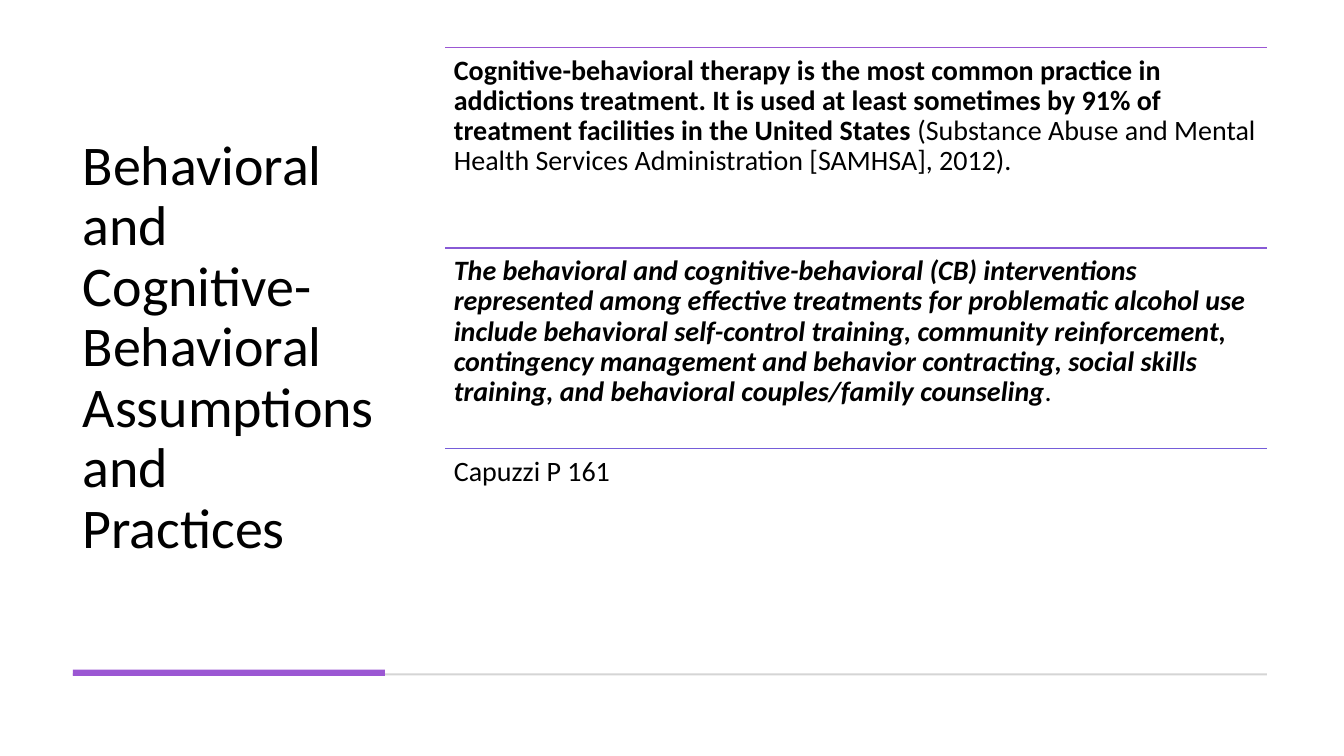
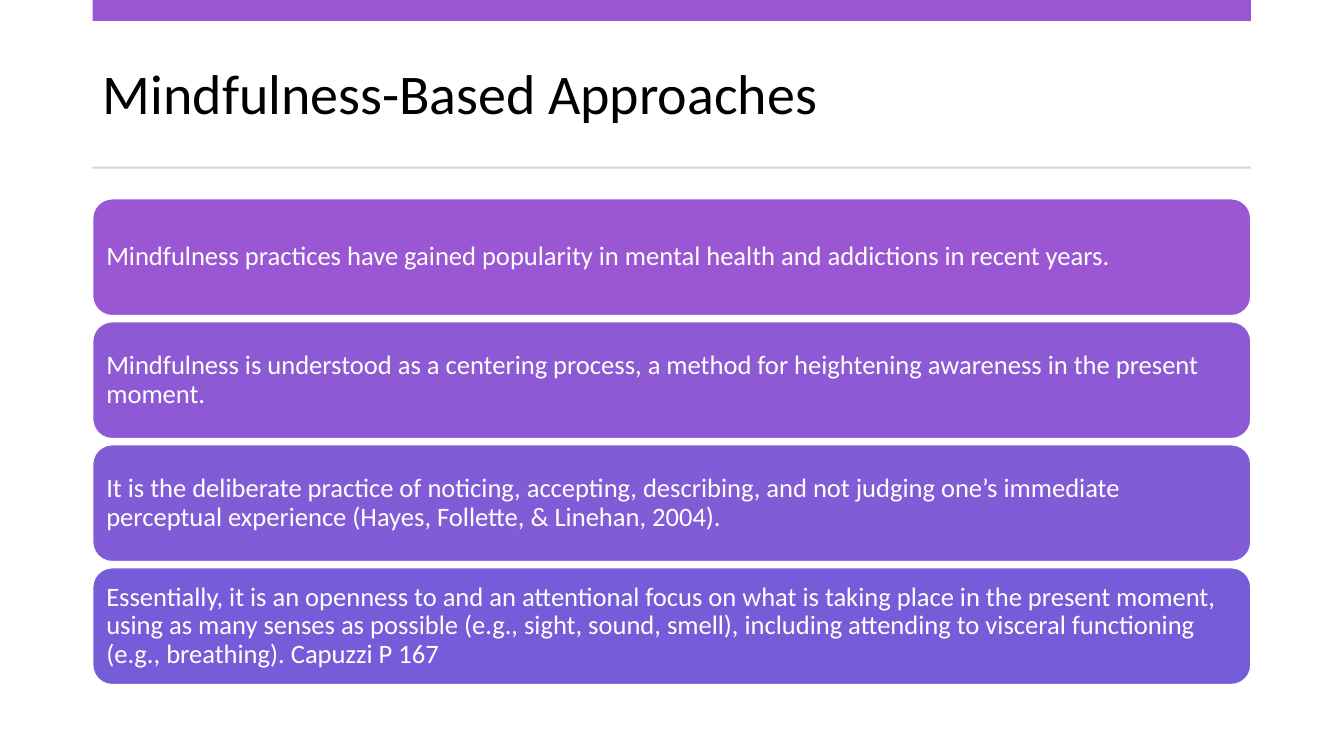
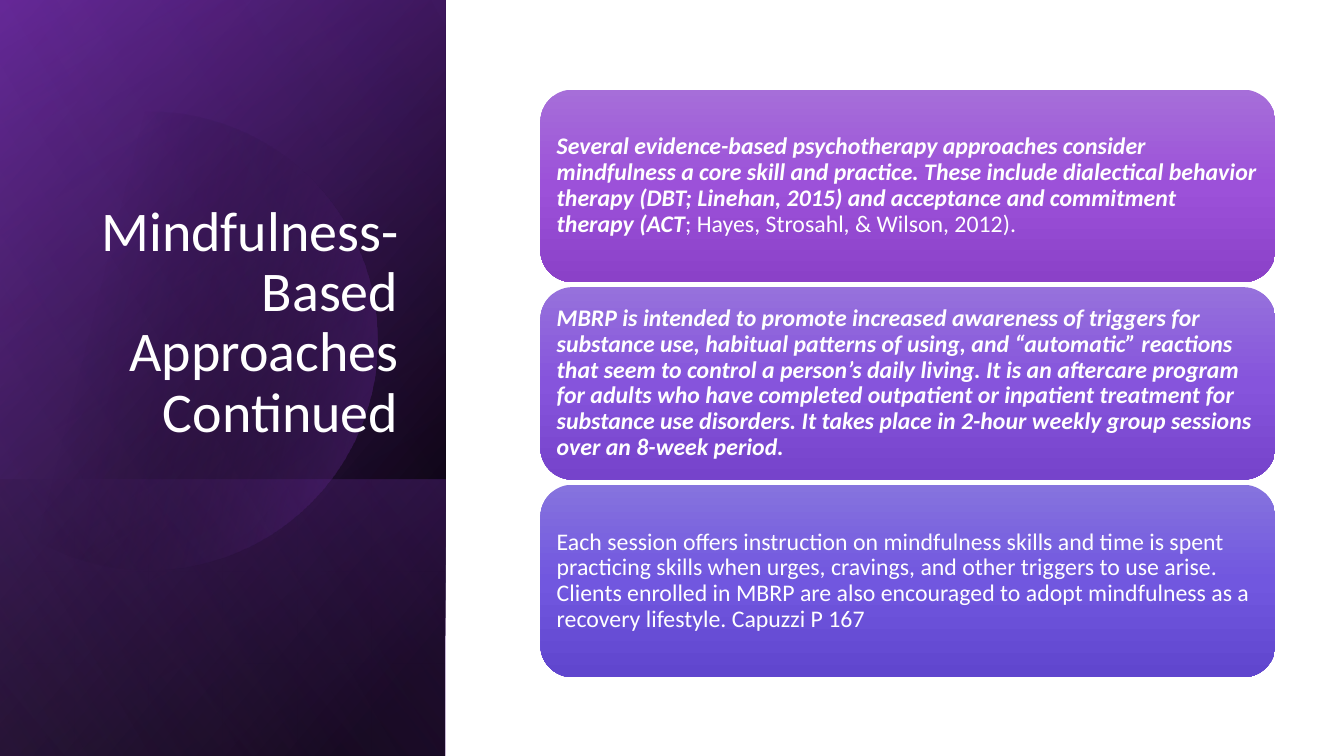
from math import acos, cos, sin
from lxml.etree import SubElement
from pptx import Presentation
from pptx.dml.color import RGBColor
from pptx.enum.shapes import MSO_CONNECTOR, MSO_SHAPE
from pptx.enum.text import MSO_ANCHOR, PP_ALIGN
from pptx.oxml.ns import qn
from pptx.util import Pt

FONT = "Calibri"
BLACK = RGBColor(0x00, 0x00, 0x00)
WHITE = RGBColor(0xFF, 0xFF, 0xFF)
GREY = RGBColor(0xD5, 0xD5, 0xD5)
PURPLE = RGBColor(0x9B, 0x57, 0xD3)
INDIGO = RGBColor(0x75, 0x5D, 0xD9)
VIOLET = RGBColor(0x76, 0x2E, 0xB1)
PLUM = RGBColor(0x58, 0x23, 0x85)
LILAC = RGBColor(0xAE, 0x76, 0xDB)


def fade(count):
    """Colours in even steps from purple to indigo."""
    return [RGBColor(*(round(a + (b - a) * i / (count - 1))
                       for a, b in zip(PURPLE, INDIGO)))
            for i in range(count)]


class Deck:
    def __init__(self):
        self.prs = Presentation()
        self.prs.slide_width, self.prs.slide_height = Pt(960), Pt(540)
        self.slide = None

    def page(self):
        self.slide = self.prs.slides.add_slide(self.prs.slide_layouts[6])

    # Text: runs are (text, style) pairs, style holds "b" and "i"
    def label(self, shape, runs, size, color, anchor, inset=None,
              align=PP_ALIGN.LEFT):
        frame = shape.text_frame
        frame.word_wrap = True
        frame.vertical_anchor = anchor
        if inset is not None:
            frame.margin_left = frame.margin_right = Pt(inset)
            frame.margin_top = frame.margin_bottom = Pt(inset)
        para = frame.paragraphs[0]
        para.alignment, para.line_spacing = align, 0.9
        font = para.font
        font.name, font.size, font.color.rgb = FONT, Pt(size), color
        for text, style in runs:
            run = para.add_run()
            run.text = text
            target = font if len(runs) == 1 else run.font
            target.bold, target.italic = "b" in style, "i" in style

    def text(self, box, runs, size, color, anchor, **more):
        shape = self.slide.shapes.add_textbox(*map(Pt, box))
        self.label(shape, runs, size, color, anchor, **more)

    def title(self, box, text, color=BLACK, anchor=MSO_ANCHOR.MIDDLE,
              align=PP_ALIGN.LEFT):
        self.text(box, [(text, "")], 40, color, anchor, align=align)

    # Shapes
    def shape(self, box, fill=None, kind=MSO_SHAPE.RECTANGLE):
        shape = self.slide.shapes.add_shape(kind, *map(Pt, box))
        shape.shadow.inherit = False
        shape.line.fill.background()
        if fill is not None:
            shape.fill.solid()
            shape.fill.fore_color.rgb = fill
        return shape

    def blend(self, shape, stops, angle):
        """Gradient fill; stops are (place, colour, opacity) in percent."""
        shape.fill.gradient()
        grad = shape.element.spPr.find(qn("a:gradFill"))
        for child in list(grad):
            grad.remove(child)
        grad.set("rotWithShape", "1")
        group = SubElement(grad, qn("a:gsLst"))
        for place, color, alpha in stops:
            stop = SubElement(group, qn("a:gs"), pos=str(place * 1000))
            tone = SubElement(stop, qn("a:srgbClr"), val=str(color))
            if alpha < 100:
                SubElement(tone, qn("a:alpha"), val=str(alpha * 1000))
        SubElement(grad, qn("a:lin"), ang=str(angle * 60000), scaled="0")

    def card(self, box, runs, size, inset):
        shape = self.shape(box, kind=MSO_SHAPE.ROUNDED_RECTANGLE)
        self.label(shape, runs, size, WHITE, MSO_ANCHOR.MIDDLE, inset)
        return shape

    def panel(self, top, stops, angle):
        """Side panel from top to the slide's foot, turned and mirrored."""
        wide, high = 318.2, 540 - top
        shift = (high - wide) / 2
        shape = self.shape((-shift, top + shift, high, wide))
        shape.rotation = 90
        shape.element.spPr.xfrm.set("flipH", "1")
        self.blend(shape, stops, angle)

    def disc(self, x, y, radius, stops, angle):
        """Circle cut off at the slide's left edge."""
        end, steps = acos(-x / radius), 90
        turns = [end * (2 * i / steps - 1) for i in range(steps + 1)]
        points = [(Pt(x + radius * cos(t)), Pt(y + radius * sin(t)))
                  for t in turns]
        outline = self.slide.shapes.build_freeform(*points[0])
        outline.add_line_segments(points[1:], close=True)
        shape = outline.convert_to_shape()
        shape.shadow.inherit = False
        shape.line.fill.background()
        self.blend(shape, stops, angle)

    def rule(self, x, y, wide, color):
        line = self.slide.shapes.add_connector(
            MSO_CONNECTOR.STRAIGHT, Pt(x), Pt(y), Pt(x + wide), Pt(y))
        line.line.color.rgb, line.line.width = color, Pt(1)
        SubElement(line.element.spPr, qn("a:effectLst"))


def main():
    deck = Deck()

    # Slide 1: ruled list
    deck.page()
    deck.title((52, 34, 223, 430),
               "Behavioral and Cognitive-Behavioral Assumptions and Practices")
    deck.shape((52, 481, 853, 1.4), GREY)
    deck.shape((52, 478.3, 223, 4.6), PURPLE)
    rows = [
        [("Cognitive-behavioral therapy is the most common practice in "
          "addictions treatment. It is used at least sometimes by 91% of "
          "treatment facilities in the United States ", "b"),
         ("(Substance Abuse and Mental Health Services Administration "
          "[SAMHSA], 2012).", "")],
        [("The behavioral and cognitive-behavioral (CB) interventions "
          "represented among effective treatments for problematic alcohol "
          "use include behavioral self-control training, community "
          "reinforcement, contingency management and behavior contracting, "
          "social skills training, and behavioral couples/family counseling",
          "bi"), (".", "")],
        [("Capuzzi P 161", "")],
    ]
    for i, (runs, color) in enumerate(zip(rows, fade(3))):
        top = 34 + 143.2 * i
        deck.rule(318.2, top, 586.8, color)
        deck.text((318.2, top, 586.8, 143.2), runs, 20, BLACK,
                  MSO_ANCHOR.TOP, inset=6)

    # Slide 2: four cards
    deck.page()
    deck.title((66.2, 26.6, 827.3, 85), "Mindfulness-Based Approaches")
    deck.shape((66.2, 0, 827.3, 15), PURPLE)
    deck.shape((66.2, 119, 827.3, 1.4), GREY)
    notes = [
        "Mindfulness practices have gained popularity in mental health and "
        "addictions in recent years.",
        "Mindfulness is understood as a centering process, a method for "
        "heightening awareness in the present moment.",
        "It is the deliberate practice of noticing, accepting, describing, "
        "and not judging one’s immediate perceptual experience (Hayes, "
        "Follette, & Linehan, 2004).",
        "Essentially, it is an openness to and an attentional focus on what "
        "is taking place in the present moment, using as many senses as "
        "possible (e.g., sight, sound, smell), including attending to "
        "visceral functioning (e.g., breathing). Capuzzi P 167",
    ]
    for i, (note, color) in enumerate(zip(notes, fade(4))):
        card = deck.card((66.2, 142 + 87.84 * i, 827.3, 83.5),
                         [(note, "")], 19, 5.7)
        card.fill.solid()
        card.fill.fore_color.rgb = color
        card.line.color.rgb, card.line.width = WHITE, Pt(1)

    # Slide 3: shaded side panel
    deck.page()
    deck.panel(0, [(8, BLACK, 100), (100, PLUM, 100)], 50)
    deck.panel(0, [(0, BLACK, 0), (99, VIOLET, 46)], 30)
    deck.panel(342.7, [(2, VIOLET, 29), (100, BLACK, 30)], 130)
    deck.disc(106, 243, 163.5, [(29, BLACK, 0), (100, VIOLET, 43)], 14)
    deck.panel(0, [(0, BLACK, 0), (99, LILAC, 11)], 120)
    deck.title((46, 132.5, 245.5, 188.6),
               "Mindfulness-Based Approaches Continued", WHITE,
               MSO_ANCHOR.BOTTOM, PP_ALIGN.RIGHT)

    # Slide 3: gradient cards
    cards = [
        (("A66ED9", "9C51D9", "8B41C8"),
         [("Several evidence-based psychotherapy approaches consider "
           "mindfulness a core skill and practice. These include dialectical "
           "behavior therapy (DBT; Linehan, 2015) and acceptance and "
           "commitment therapy (ACT", "bi"),
          ("; Hayes, Strosahl, & Wilson, 2012).", "")]),
        (("9671DC", "8654DC", "7643CB"),
         [("MBRP is intended to promote increased awareness of triggers for "
           "substance use, habitual patterns of using, and “automatic” "
           "reactions that seem to control a person’s daily living. It is an "
           "aftercare program for adults who have completed outpatient or "
           "inpatient treatment for substance use disorders. It takes place "
           "in 2-hour weekly group sessions over an 8-week period.", "bi")]),
        (("8673DE", "7157DF", "6046CE"),
         [("Each session offers instruction on mindfulness skills and time "
           "is spent practicing skills when urges, cravings, and other "
           "triggers to use arise. Clients enrolled in MBRP are also "
           "encouraged to adopt mindfulness as a recovery lifestyle. "
           "Capuzzi P 167", "")]),
    ]
    for i, (tones, runs) in enumerate(cards):
        card = deck.card((386, 64 + 141.1 * i, 525, 137.5), runs, 17, 5)
        stops = [(50 * n, RGBColor.from_string(tone), 100)
                 for n, tone in enumerate(tones)]
        deck.blend(card, stops, 90)

    deck.prs.save("out.pptx")


if __name__ == "__main__":
    main()
